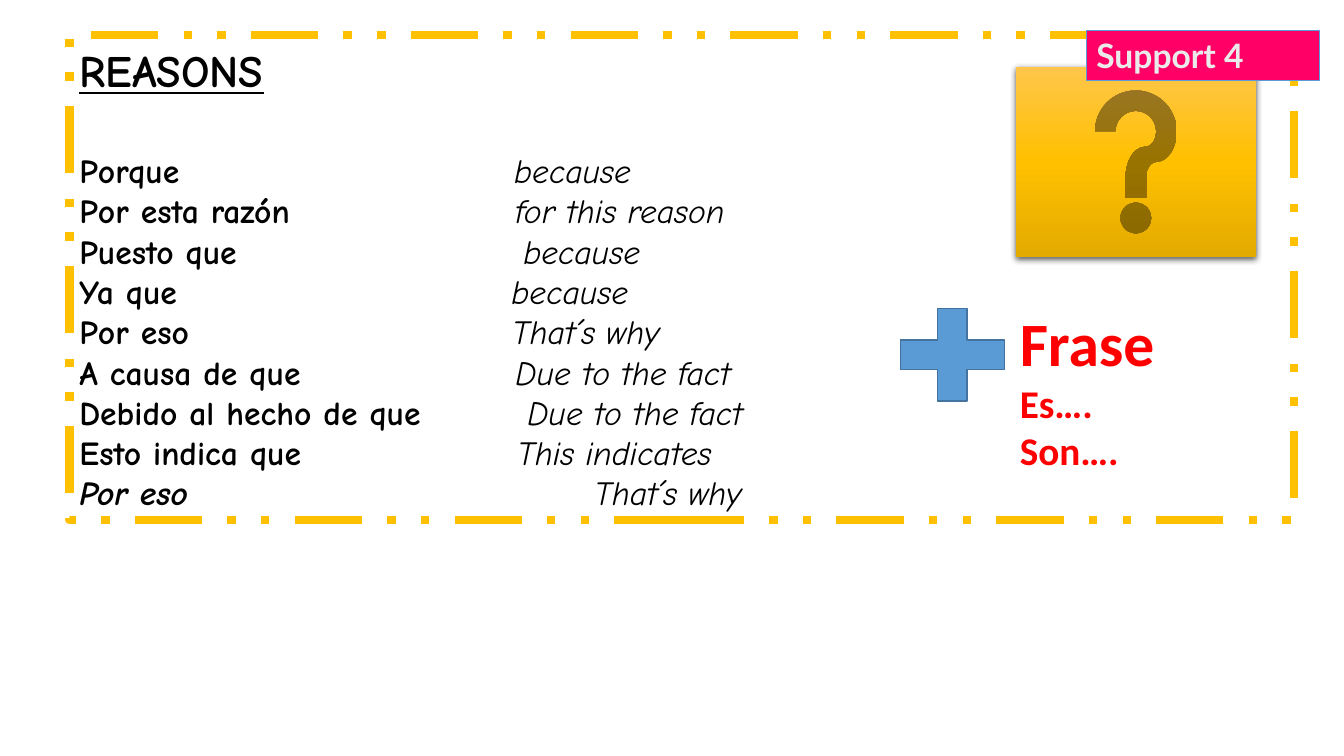
from copy import deepcopy
from dataclasses import dataclass

from pptx import Presentation
from pptx.dml.color import RGBColor
from pptx.enum.dml import MSO_LINE_DASH_STYLE as Dash
from pptx.enum.shapes import MSO_SHAPE as Preset
from pptx.enum.text import MSO_ANCHOR as Anchor, PP_ALIGN as Align
from pptx.oxml import parse_xml
from pptx.oxml.ns import qn
from pptx.util import Cm, Pt

NAMESPACE = 'xmlns:a="http://schemas.openxmlformats.org/drawingml/2006/main"'


@dataclass
class Area:
    left: float
    top: float
    width: float
    height: float

    def lengths(self) -> list:
        return [Cm(value) for value in (self.left, self.top, self.width, self.height)]


@dataclass
class Reason:
    spanish: str
    english: str
    tab: float
    italic: bool = False


@dataclass
class Style:
    size: float
    font: str
    color: str
    bold: bool = True
    italic: bool = False


REASONS = [
    Reason("Porque", "because", 10.96),
    Reason("Por esta razón", "for this reason", 10.99),
    Reason("Puesto que", "because", 11.19),
    Reason("Ya que", "because", 10.89),
    Reason("Por eso", "That´s why", 10.91),
    Reason("A causa de que", "Due to the fact", 10.99),
    Reason("Debido al hecho de que", "Due to the fact", 11.29),
    Reason("Esto indica que", "This indicates", 11.04),
    Reason("Por eso", "That´s why", 12.98, italic=True),
]
ENDINGS = [("Frase", 44), ("Es….", 28), ("Son….", 28)]
GRADIENT = [(0, "FFC64B"), (0.5, "FFC000"), (1, "E3AB00")]


def rgb(color: str) -> RGBColor:
    return RGBColor.from_string(color)


def style_span(span, style: Style) -> None:
    font = span.font
    font.size, font.name = Pt(style.size), style.font
    font.bold, font.italic = style.bold, style.italic
    font.color.rgb = rgb(style.color)


def add_box(page, preset, area: Area, fill: str = "", line: str = "", weight: float = 1):
    box = page.shapes.add_shape(preset, *area.lengths())
    box.shadow.inherit = False
    if fill:
        box.fill.solid()
        box.fill.fore_color.rgb = rgb(fill)
    if line:
        box.line.color.rgb = rgb(line)
        box.line.width = Pt(weight)
    else:
        box.line.fill.background()
    return box


def add_reasons(page) -> None:
    box = add_box(page, Preset.RECTANGLE, Area(1.75, 0.89, 30.86, 12.22), "FFFFFF", "FFC000", 6)
    box.line.dash_style = Dash.DASH_DOT_DOT
    frame = box.text_frame
    frame.word_wrap = True
    frame.vertical_anchor = Anchor.MIDDLE
    lines = [f"{reason.spanish}\t" for reason in REASONS]
    frame.text = "\n".join(["REASONS", *lines])
    title, *rows = frame.paragraphs
    title.alignment = Align.LEFT
    title.space_after = Pt(38)
    style_span(title.runs[0], Style(32, "Comic Neue", "000000"))
    title.runs[0].font.underline = True
    for para, reason in zip(rows, REASONS):
        para.alignment = Align.LEFT
        para.add_run().text = reason.english
        spanish, english = para.runs
        style_span(spanish, Style(24, "Comic Neue", "000000", italic=reason.italic))
        style_span(english, Style(24, "Comic Neue", "000000", bold=False, italic=True))
        stops = f'<a:tabLst {NAMESPACE}><a:tab pos="{Cm(reason.tab)}" algn="l"/></a:tabLst>'
        para._p.get_or_add_pPr().append(parse_xml(stops))


def add_endings(page) -> None:
    box = page.shapes.add_textbox(*Area(25.45, 7.57, 6.32, 4.52).lengths())
    frame = box.text_frame
    frame.word_wrap = True
    frame.text = "\n".join(text for text, _ in ENDINGS)
    for para, (_, size) in zip(frame.paragraphs, ENDINGS):
        style_span(para.runs[0], Style(size, "Calibri", "FF0000"))


def add_help_button(page) -> None:
    button = add_box(page, Preset.ACTION_BUTTON_HELP, Area(25.6, 1.68, 6.05, 4.8))
    button.fill.gradient()
    button.fill.gradient_angle = 270
    stop_list = button._element.spPr.find(f".//{qn('a:gsLst')}")
    stop_list.append(deepcopy(stop_list[0]))
    for stop, (position, color) in zip(button.fill.gradient_stops, GRADIENT):
        stop.position = position
        stop.color.rgb = rgb(color)
    shadow = (
        f'<a:outerShdw {NAMESPACE} blurRad="{Pt(4.5)}" dist="{Pt(1.5)}" dir="5400000" '
        'algn="ctr" rotWithShape="0"><a:srgbClr val="000000">'
        '<a:alpha val="63000"/></a:srgbClr></a:outerShdw>'
    )
    button._element.spPr.find(qn("a:effectLst")).append(parse_xml(shadow))


def add_support_label(page) -> None:
    label = add_box(page, Preset.RECTANGLE, Area(27.38, 0.76, 5.87, 1.28), "FF0066", "5B9BD5", 0.75)
    frame = label.text_frame
    frame.word_wrap = True
    frame.vertical_anchor = Anchor.TOP
    frame.text = "Support 4"
    para = frame.paragraphs[0]
    para.alignment = Align.LEFT
    span = para.runs[0]
    style_span(span, Style(24, "Lato", "EBEAEA"))
    outline = (
        f'<a:ln {NAMESPACE} w="{Pt(1)}"><a:solidFill>'
        '<a:srgbClr val="3A5274"/></a:solidFill></a:ln>'
    )
    span._r.get_or_add_rPr().insert(0, parse_xml(outline))


def main() -> None:
    deck = Presentation()
    deck.slide_width, deck.slide_height = Cm(33.87), Cm(19.05)
    page = deck.slides.add_slide(deck.slide_layouts[6])
    add_reasons(page)
    add_box(page, Preset.MATH_PLUS, Area(22.22, 7.35, 3.56, 3.18), "5B9BD5", "43739E")
    add_endings(page)
    add_help_button(page)
    add_support_label(page)
    deck.save("out.pptx")


if __name__ == "__main__":
    main()
